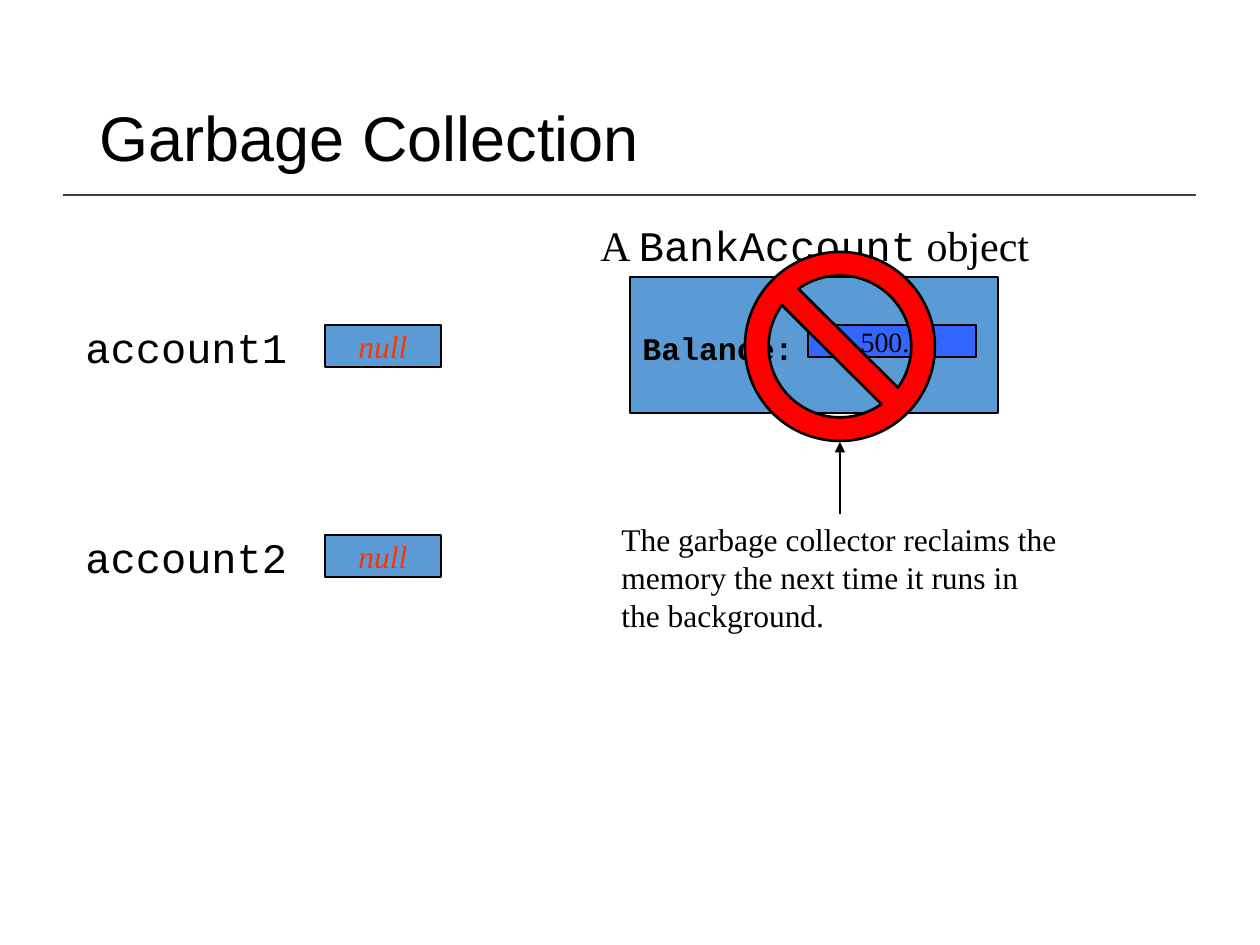
from lxml import etree
from pptx import Presentation
from pptx import util as u
from pptx.dml.color import RGBColor
from pptx.enum import shapes, text
from pptx.oxml.ns import qn

PX = 914400 / 126
SERIF, MONO, SANS = "Times New Roman", "Courier New", "Arial"
BLACK, BLUE, FIELD_BLUE = "000000", "5B9BD5", "3366FF"
ORANGE, RED, GREY = "FF3300", "FF0000", "404040"


def px(*lengths):
    return [u.Emu(round(n * PX)) for n in lengths]


def color(hex_value):
    return RGBColor.from_string(hex_value)


class Page:
    """The current slide and its style."""

    def __init__(self, slide):
        self.slide = slide

    def font(self, font, size, name, ink=BLACK, bold=False, italic=False):
        font.size, font.name = u.Pt(size), name
        font.bold, font.italic = bold, italic
        font.color.rgb = color(ink)

    def title(self, words, box):
        title = self.slide.shapes.title
        title.left, title.top, title.width, title.height = px(*box)
        title.text_frame.vertical_anchor = text.MSO_ANCHOR.MIDDLE
        paragraph = title.text_frame.paragraphs[0]
        paragraph.text = words
        paragraph.alignment = text.PP_ALIGN.LEFT
        paragraph.line_spacing = 0.9
        self.font(paragraph.font, 36, SANS)

    def label(self, pieces, box, size, wrap=True):
        """Text box made of (words, font name) pieces."""
        label = self.slide.shapes.add_textbox(*px(*box))
        label.text_frame.word_wrap = wrap
        paragraph = label.text_frame.paragraphs[0]
        for words, name in pieces:
            run = paragraph.add_run()
            run.text = words
            if len(pieces) > 1:
                self.font(run.font, size, name)
        if len(pieces) == 1:
            self.font(paragraph.font, size, pieces[0][1])
        return label

    def shape(self, kind, box, fill, weight=0.75):
        shape = self.slide.shapes.add_shape(kind, *px(*box))
        shape.shadow.inherit = False
        shape.fill.solid()
        shape.fill.fore_color.rgb = color(fill)
        shape.line.color.rgb = color(BLACK)
        shape.line.width = u.Pt(weight)
        return shape

    def box(self, words, box, fill, size, name, align=text.PP_ALIGN.CENTER, **style):
        shape = self.shape(shapes.MSO_SHAPE.RECTANGLE, box, fill)
        frame = shape.text_frame
        frame.word_wrap = False
        frame.vertical_anchor = text.MSO_ANCHOR.MIDDLE
        paragraph = frame.paragraphs[0]
        paragraph.text = words
        paragraph.alignment = align
        self.font(paragraph.font, size, name, **style)
        return shape

    def line(self, start, end, ink, weight, arrow=False):
        line = self.slide.shapes.add_connector(
            shapes.MSO_CONNECTOR.STRAIGHT, *px(*start, *end))
        line.line.color.rgb = color(ink)
        line.line.width = u.Pt(weight)
        if arrow:
            outline = line.line._get_or_add_ln()
            etree.SubElement(outline, qn("a:tailEnd"), type="triangle")
        etree.SubElement(line._element.spPr, qn("a:effectLst"))
        return line


def main():
    deck = Presentation()
    deck.slide_width, deck.slide_height = px(1260, 945)
    page = Page(deck.slides.add_slide(deck.slide_layouts[5]))

    # Heading with its rule
    page.line((63, 195), (1196, 195), GREY, 1)
    page.title("Garbage Collection", (87, 50, 1086, 183))

    # Variables that no longer refer to an object
    for row, variable in enumerate(("account1", "account2")):
        top = 315 + 210 * row
        page.label([(variable, MONO)], (73, top, 231, 63), 24)
        page.box("null", (325, top + 10, 116, 42), BLUE, 18, SERIF,
                 ink=ORANGE, italic=True)

    # The unreferenced object
    page.label([("A ", SERIF), ("BankAccount", MONO), (" object", SERIF)],
               (588, 213, 456, 63), 24, wrap=False)
    account = page.box("Balance:", (630, 277, 368, 136), BLUE, 18, MONO,
                       align=text.PP_ALIGN.LEFT, bold=True)
    account.text_frame.margin_top = px(12)[0]
    page.box("500.0", (808, 325, 168, 32), FIELD_BLUE, 16, SERIF)

    # Reclaimed: prohibition sign and explanation
    sign = page.shape(shapes.MSO_SHAPE.NO_SYMBOL, (745, 252, 190, 189), RED, 1.5)
    sign.adjustments[0] = 0.125
    explanation = page.label(
        [("The garbage collector reclaims the memory the next time it runs in "
          "the background.", SERIF)], (609, 514, 462, 126), 18)
    pointer = page.line((840, 514), (840, 442), BLACK, 0.75, arrow=True)
    pointer.begin_connect(explanation, 0)

    deck.save("out.pptx")


if __name__ == "__main__":
    main()
